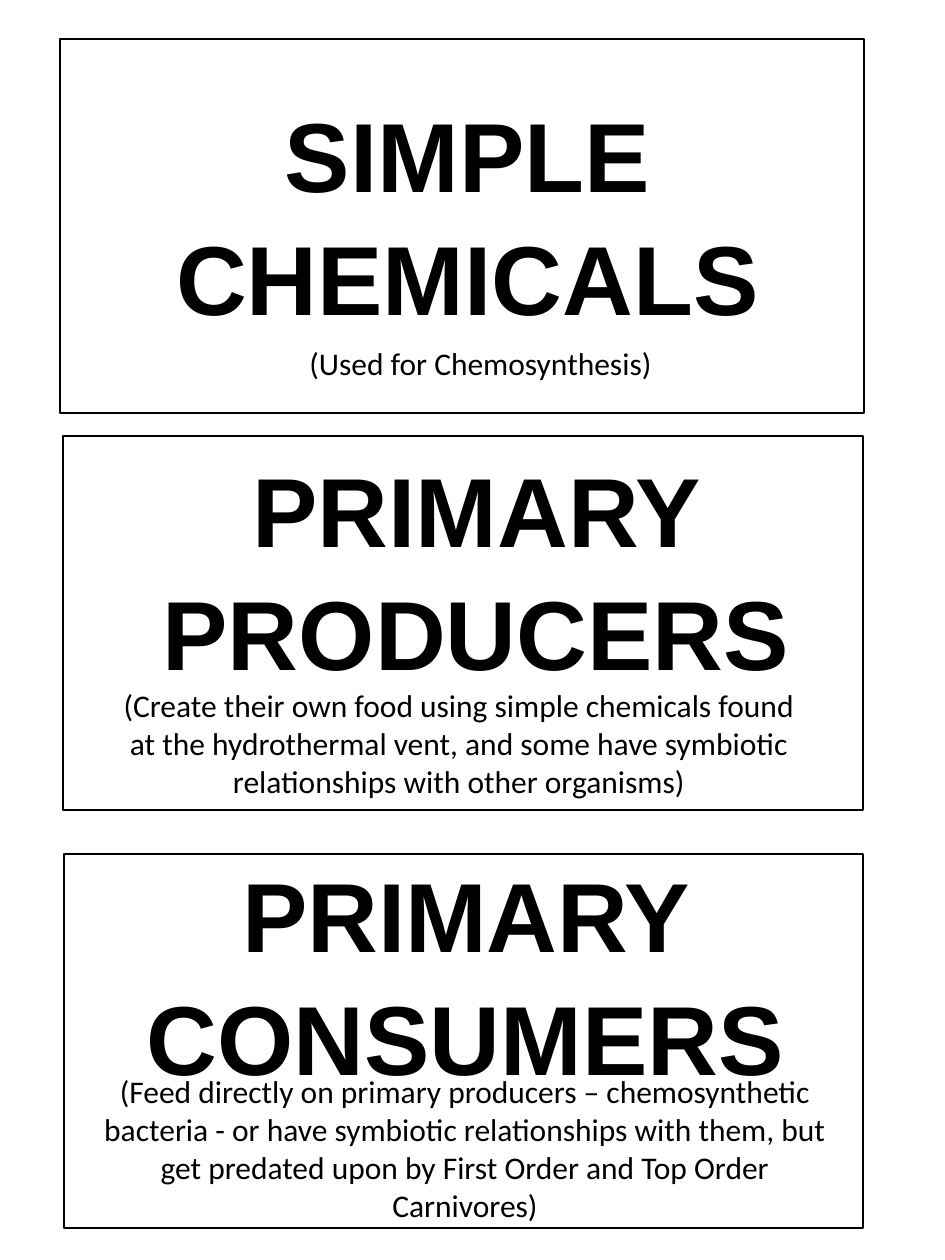
import pptx
import pptx.dml.color
import pptx.enum.shapes
import pptx.enum.text
import pptx.util

PX_PER_INCH = 126
COLORS = {"ink": "000000"}
ALIGN = pptx.enum.text.PP_ALIGN


def px(length):
    return pptx.util.Emu(round(length * 914400 / PX_PER_INCH))


class CardSheet:
    """Holds the text styles and the slide that the cards are placed on."""

    title = {"font": "Arial", "size": 56, "bold": True, "spacing": 1.05}
    caption = {"font": "Calibri", "size": 18, "bold": False, "spacing": 1.0}
    ink = pptx.dml.color.RGBColor.from_string(COLORS["ink"])

    def __init__(self, slide):
        self.slide = slide

    def frame(self, left, top, width, height):
        border = self.slide.shapes.add_shape(
            pptx.enum.shapes.MSO_SHAPE.RECTANGLE,
            px(left), px(top), px(width), px(height))
        border.shadow.inherit = False
        border.fill.background()
        border.line.color.rgb = self.ink
        border.line.width = pptx.util.Pt(1)

    def text(self, wording, box, style, align=ALIGN.CENTER):
        holder = self.slide.shapes.add_textbox(*map(px, box))
        body = holder.text_frame
        body.word_wrap = True
        body.auto_size = pptx.enum.text.MSO_AUTO_SIZE.SHAPE_TO_FIT_TEXT
        line = body.paragraphs[0]
        line.alignment = align
        line.line_spacing = style["spacing"]
        run = line.add_run()
        run.text = wording
        run.font.name = style["font"]
        run.font.size = pptx.util.Pt(style["size"])
        run.font.bold = style["bold"]
        run.font.color.rgb = self.ink


# Each card: frame, title with its box, caption with its box and alignment
CARDS = [
    ((60, 39, 804, 374),
     "SIMPLE CHEMICALS", (87, 82, 761, 251),
     "(Used for Chemosynthesis)", (297, 338, 369, 50), ALIGN.LEFT),
    ((63, 436, 800, 374),
     "PRIMARY PRODUCERS", (101, 437, 750, 251),
     "(Create their own food using simple chemicals found at the hydrothermal "
     "vent, and some have symbiotic relationships with other organisms)",
     (101, 680, 716, 127), ALIGN.CENTER),
    ((64, 854, 799, 374),
     "PRIMARY CONSUMERS", (83, 842, 765, 251),
     "(Feed directly on primary producers – chemosynthetic bacteria - or have "
     "symbiotic relationships with them, but get predated upon by First Order "
     "and Top Order Carnivores)",
     (91, 1066, 748, 165), ALIGN.CENTER),
]


def main():
    deck = pptx.Presentation()
    deck.slide_width = px(945)
    deck.slide_height = px(1260)
    sheet = CardSheet(deck.slides.add_slide(deck.slide_layouts[6]))

    for frame, title, title_box, caption, caption_box, align in CARDS:
        sheet.frame(*frame)
        sheet.text(title, title_box, sheet.title)
        sheet.text(caption, caption_box, sheet.caption, align)

    deck.save("out.pptx")


if __name__ == "__main__":
    main()
